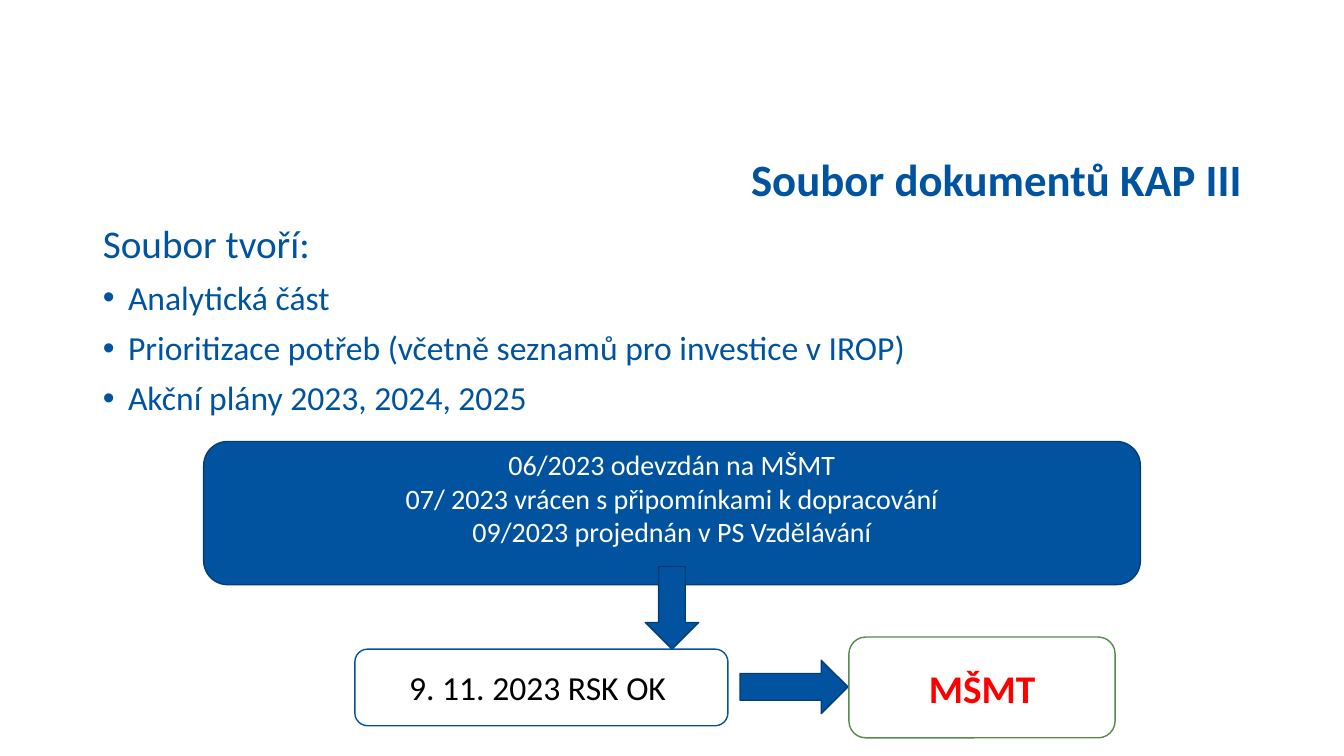
from typing import NamedTuple, Optional

from lxml import etree
from pptx import Presentation
from pptx import util as u
from pptx.dml.color import RGBColor
from pptx.enum import shapes, text
from pptx.oxml import ns

TITLE_BLUE = RGBColor(0x00, 0x54, 0x9F)
BLUE = RGBColor(0x02, 0x53, 0x9F)
DARK_BLUE = RGBColor(0x01, 0x3D, 0x76)
GREEN = RGBColor(0x58, 0x89, 0x4C)
RED = RGBColor(0xFF, 0x00, 0x00)
BLACK = RGBColor(0x00, 0x00, 0x00)
WHITE = RGBColor(0xFF, 0xFF, 0xFF)

SHAPE = shapes.MSO_SHAPE
ALIGN = text.PP_ALIGN


class Step(NamedTuple):
    kind: SHAPE
    left: float
    top: float
    width: float
    height: float
    fill: RGBColor = BLUE
    line: RGBColor = DARK_BLUE
    lines: tuple[str, ...] = ()
    size: int = 20
    color: RGBColor = WHITE
    bold: bool = False
    bottom_margin: float = 0.05


STEPS = [
    Step(SHAPE.ROUNDED_RECTANGLE, 2.02, 4.38, 9.29, 1.42,
         lines=("06/2023 odevzdán na MŠMT",
                "07/ 2023 vrácen s připomínkami k dopracování",
                "09/2023 projednán v PS Vzdělávání"),
         bottom_margin=0.35),
    Step(SHAPE.DOWN_ARROW, 6.4, 5.62, 0.53, 0.82),
    Step(SHAPE.ROUNDED_RECTANGLE, 3.52, 6.44, 3.7, 0.76, WHITE, BLUE,
         ("9. 11. 2023 RSK OK ",), 24, BLACK),
    Step(SHAPE.RIGHT_ARROW, 7.34, 6.55, 1.07, 0.53),
    Step(SHAPE.ROUNDED_RECTANGLE, 8.42, 6.32, 2.64, 1, WHITE, GREEN,
         ("MŠMT",), 28, RED, True),
]

DOCUMENTS = [
    "Analytická část",
    "Prioritizace potřeb (včetně seznamů pro investice v IROP)",
    "Akční plány 2023, 2024, 2025",
]


def place(shape, left: float, top: float, width: float, height: float) -> None:
    shape.left, shape.top = u.Inches(left), u.Inches(top)
    shape.width, shape.height = u.Inches(width), u.Inches(height)


def write(paragraph, content: str, *, size: int, color: RGBColor,
          bold: bool = False, align: ALIGN = ALIGN.LEFT,
          line_spacing: float = 1.0, space_before: float = 0,
          bullet: Optional[str] = None, indent: float = 0) -> None:
    properties = paragraph._p.get_or_add_pPr()
    properties.set("marL", str(u.Inches(indent)))
    properties.set("indent", str(-u.Inches(indent)))
    if bullet:
        font = etree.SubElement(properties, ns.qn("a:buFont"))
        font.set("typeface", "Arial")
        etree.SubElement(properties, ns.qn("a:buChar")).set("char", bullet)
    else:
        etree.SubElement(properties, ns.qn("a:buNone"))
    paragraph.alignment = align
    paragraph.line_spacing = line_spacing
    paragraph.space_before = u.Pt(space_before)
    run = paragraph.add_run()
    run.text = content
    run.font.name = "Calibri"
    run.font.size = u.Pt(size)
    run.font.bold = bold
    run.font.color.rgb = color


def draw_step(slide, step: Step) -> None:
    shape = slide.shapes.add_shape(
        step.kind, u.Inches(step.left), u.Inches(step.top),
        u.Inches(step.width), u.Inches(step.height))
    shape.shadow.inherit = False
    shape.fill.solid()
    shape.fill.fore_color.rgb = step.fill
    shape.line.color.rgb = step.line
    shape.line.width = u.Pt(1)
    frame = shape.text_frame
    frame.word_wrap = True
    frame.vertical_anchor = text.MSO_ANCHOR.MIDDLE
    frame.margin_bottom = u.Inches(step.bottom_margin)
    for index, line in enumerate(step.lines):
        paragraph = frame.add_paragraph() if index else frame.paragraphs[0]
        write(paragraph, line, size=step.size, color=step.color,
              bold=step.bold, align=ALIGN.CENTER)


def main() -> None:
    presentation = Presentation()
    presentation.slide_width = u.Inches(13.33)
    presentation.slide_height = u.Inches(7.5)
    slide = presentation.slides.add_slide(presentation.slide_layouts[1])

    # Title
    title = slide.shapes.title
    place(title, 0.92, 1.43, 11.5, 0.75)
    title.text_frame.auto_size = text.MSO_AUTO_SIZE.NONE
    title.text_frame.vertical_anchor = text.MSO_ANCHOR.MIDDLE
    write(title.text_frame.paragraphs[0], "Soubor dokumentů KAP III", size=32,
          color=TITLE_BLUE, bold=True, align=ALIGN.RIGHT, line_spacing=0.9)

    # List of documents
    body = slide.placeholders[1]
    place(body, 0.92, 2.18, 11.5, 4.53)
    frame = body.text_frame
    frame.auto_size = text.MSO_AUTO_SIZE.NONE
    write(frame.paragraphs[0], "Soubor tvoří:", size=28, color=TITLE_BLUE,
          line_spacing=0.9)
    for document in DOCUMENTS:
        write(frame.add_paragraph(), document, size=24, color=TITLE_BLUE,
              line_spacing=0.9, space_before=10, bullet="•", indent=0.25)

    # Approval flow
    for step in STEPS:
        draw_step(slide, step)

    presentation.save("out.pptx")


if __name__ == "__main__":
    main()
